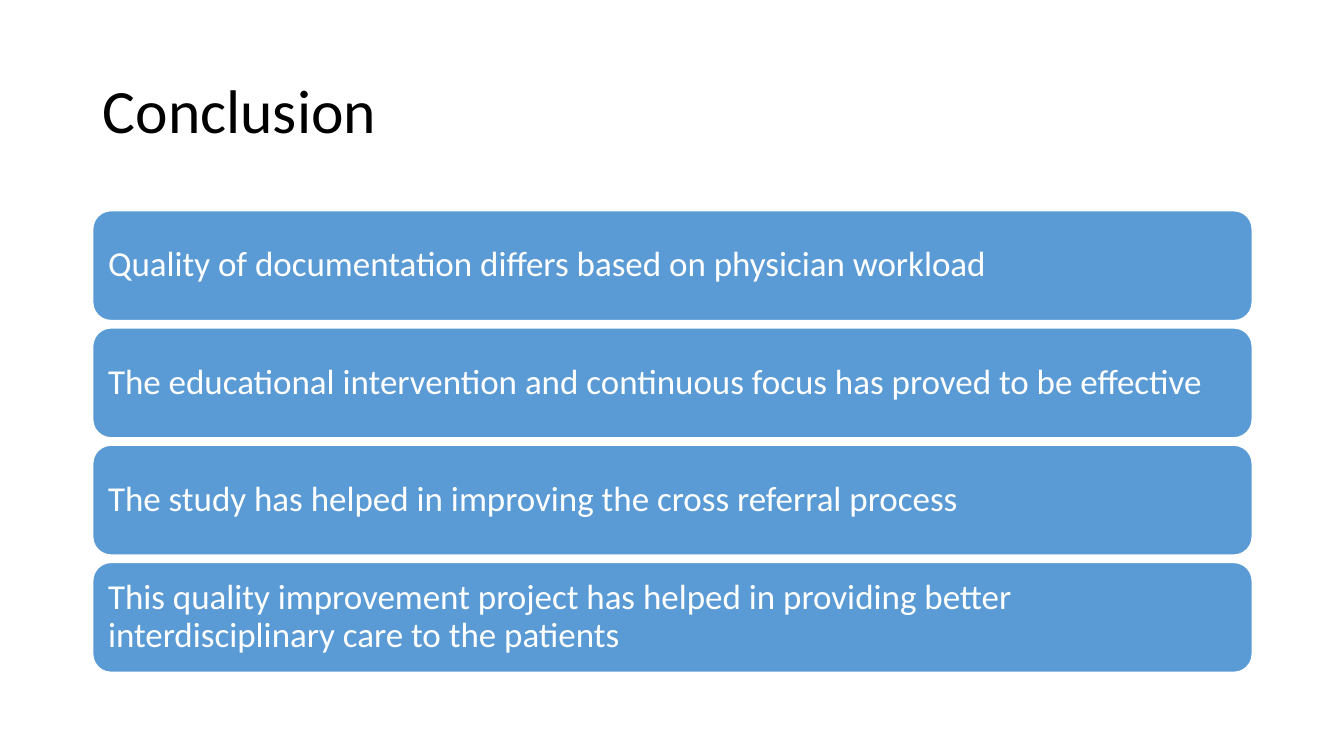
from pptx import Presentation
from pptx.dml.color import RGBColor
from pptx.enum.shapes import MSO_SHAPE
from pptx.enum.text import MSO_ANCHOR, PP_ALIGN
from pptx.util import Inches, Pt

ROUNDED = MSO_SHAPE.ROUNDED_RECTANGLE
MIDDLE = MSO_ANCHOR.MIDDLE
LEFT = PP_ALIGN.LEFT

BLACK = RGBColor(0x00, 0x00, 0x00)
WHITE = RGBColor(0xFF, 0xFF, 0xFF)
BLUE = RGBColor(0x5B, 0x9B, 0xD5)

MARGIN = 0.92
CONTENT_WIDTH = 11.5
FIRST_TOP = 2.09
LAST_TOP = 5.58
BAR_HEIGHT = 1.09

CONCLUSIONS = [
    "Quality of documentation differs based on physician workload",
    "The educational intervention and continuous focus has proved to be effective",
    "The study has helped in improving the cross referral process",
    "This quality improvement project has helped in providing better "
    "interdisciplinary care to the patients",
]
BAR_STEP = (LAST_TOP - FIRST_TOP) / (len(CONCLUSIONS) - 1)


def assign(target, values):
    for name, value in values.items():
        setattr(target, name, value)


class ConclusionSlide:
    font_name = "Calibri"
    frame_format = {
        "word_wrap": True,
        "vertical_anchor": MIDDLE,
        "margin_left": Inches(0.1),
        "margin_right": Inches(0.1),
    }
    paragraph_format = {"alignment": LEFT, "line_spacing": 0.9}

    def __init__(self, deck):
        self.slide = deck.slides.add_slide(deck.slide_layouts[5])

    def set_text(self, frame, text, size, color):
        assign(frame, self.frame_format)
        paragraph = frame.paragraphs[0]
        assign(paragraph, self.paragraph_format)
        run = paragraph.add_run()
        run.text = text
        assign(run.font, {"name": self.font_name, "size": Pt(size)})
        run.font.color.rgb = color

    def title(self, text):
        heading = self.slide.shapes.title
        assign(heading, {
            "left": Inches(MARGIN),
            "top": Inches(0.4),
            "width": Inches(CONTENT_WIDTH),
            "height": Inches(1.45),
        })
        self.set_text(heading.text_frame, text, 44, BLACK)

    def bar(self, text, top):
        bar = self.slide.shapes.add_shape(
            ROUNDED, Inches(MARGIN), Inches(top),
            Inches(CONTENT_WIDTH), Inches(BAR_HEIGHT))
        bar.shadow.inherit = False
        bar.fill.solid()
        bar.fill.fore_color.rgb = BLUE
        bar.line.color.rgb = WHITE
        bar.line.width = Pt(1)
        self.set_text(bar.text_frame, text, 25, WHITE)


def main():
    deck = Presentation()
    assign(deck, {"slide_width": Inches(13.33), "slide_height": Inches(7.5)})
    page = ConclusionSlide(deck)
    page.title("Conclusion")
    for row, conclusion in enumerate(CONCLUSIONS):
        page.bar(conclusion, FIRST_TOP + row * BAR_STEP)
    deck.save("out.pptx")


if __name__ == "__main__":
    main()
